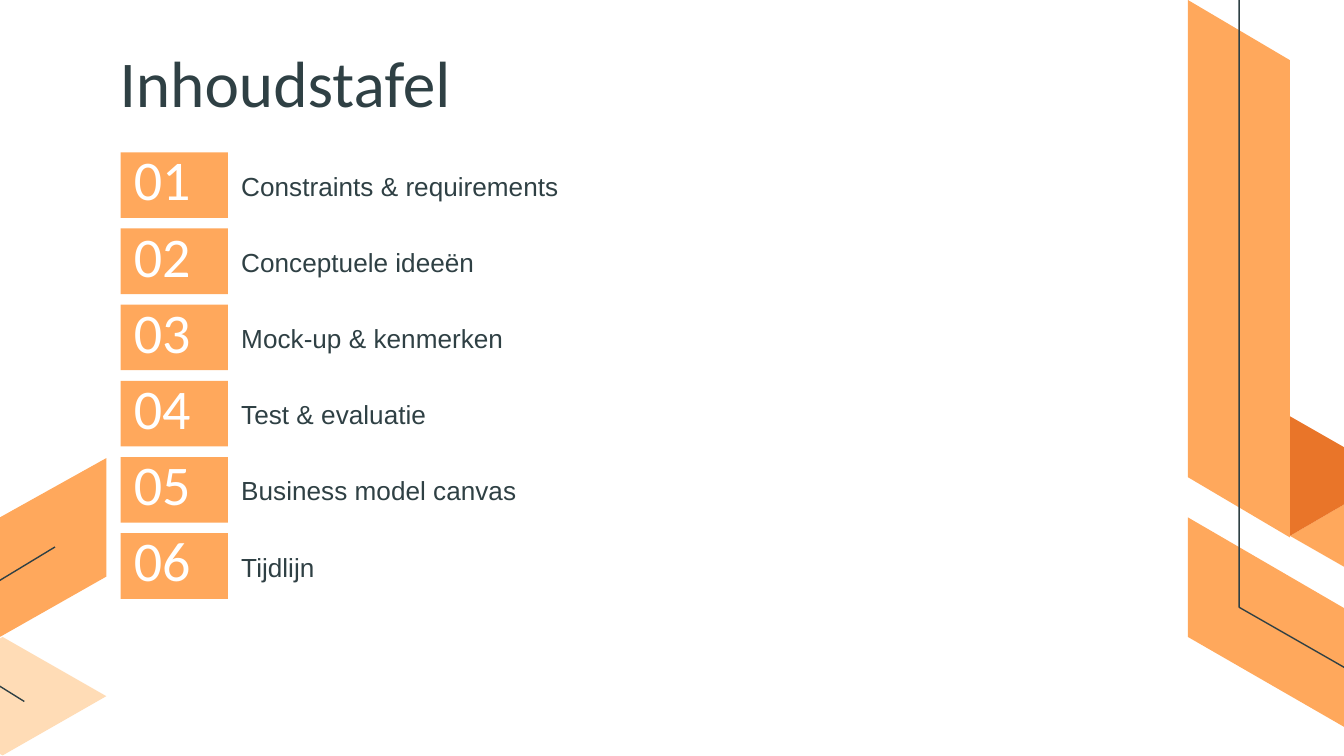
from pptx import Presentation
from pptx.dml.color import RGBColor
from pptx.enum.shapes import MSO_SHAPE
from pptx.enum.text import MSO_ANCHOR, PP_ALIGN
from pptx.util import Cm, Pt

RECT = MSO_SHAPE.RECTANGLE
TOP, MIDDLE = MSO_ANCHOR.TOP, MSO_ANCHOR.MIDDLE
LEFT = PP_ALIGN.LEFT

THEME = {
    "orange": RGBColor.from_string("FFA85C"),
    "peach": RGBColor.from_string("FFDCB6"),
    "rust": RGBColor.from_string("E97529"),
    "ink": RGBColor.from_string("2F4044"),
    "white": RGBColor.from_string("FFFFFF"),
    "heading_font": "Calibri",
    "body_font": "Arial",
    "title_size": Pt(35),
    "number_size": Pt(30),
    "label_size": Pt(14),
    "line_width": Pt(0.75),
}

TITLE = "Inhoudstafel"
CHAPTERS = [
    "Constraints & requirements",
    "Conceptuele ideeën",
    "Mock-up & kenmerken",
    "Test & evaluatie",
    "Business model canvas",
    "Tijdlijn",
]

# Ribbon faces, back to front: fill and corner points in cm
RIBBONS = [
    ("orange", [(0, 9.78), (2.01, 8.66), (2.01, 10.9), (0, 12.04)]),
    ("peach", [(0.05, 14.28), (-1.91, 13.16), (0.05, 12.04), (2.01, 13.16)]),
    ("orange", [(26.34, 11.25), (28.3, 10.13), (26.34, 8.99), (24.38, 10.13)]),
    ("rust", [(26.34, 8.99), (24.38, 10.13), (24.38, 7.87)]),
    ("orange", [(22.45, 0), (22.45, 9.02), (24.38, 10.16), (24.38, 1.14)]),
    ("orange", [(22.45, 9.78), (26.34, 12.04), (26.34, 14.28), (22.45, 12.04)]),
]
THREADS = [
    [(0.46, 13.26), (-0.76, 12.5), (-0.76, 11.43), (1.04, 10.34)],
    [(23.42, 0), (23.42, 11.48), (27.51, 13.82)],
]

ROW_TOP, ROW_PITCH = 2.88, 1.44
NUMBER_LEFT, NUMBER_WIDTH, NUMBER_HEIGHT = 2.28, 2.03, 1.24
LABEL_WIDTH, LABEL_HEIGHT = 8.59, 1.07
INSET = 0.25


def add_outline(s, points, closed):
    corners = [(Cm(x), Cm(y)) for x, y in points]
    builder = s.shapes.build_freeform(*corners[0])
    builder.add_line_segments(corners[1:], close=closed)
    sp = builder.convert_to_shape()
    sp.shadow.inherit = False
    return sp


def add_ribbon(s, color, points):
    sp = add_outline(s, points, True)
    sp.fill.solid()
    sp.fill.fore_color.rgb = THEME[color]
    sp.line.fill.background()


def add_thread(s, points):
    sp = add_outline(s, points, False)
    sp.fill.background()
    sp.line.color.rgb = THEME["ink"]
    sp.line.width = THEME["line_width"]


def write(sp, text, font, size, color, anchor=TOP, inset_top=0):
    tf = sp.text_frame
    tf.word_wrap = True
    tf.vertical_anchor = anchor
    tf.margin_left = tf.margin_right = tf.margin_bottom = Cm(INSET)
    tf.margin_top = Cm(inset_top)
    tf.text = text
    p = tf.paragraphs[0]
    p.alignment = LEFT
    r = p.runs[0]
    r.font.name = THEME[font]
    r.font.size = THEME[size]
    r.font.color.rgb = THEME[color]


def add_chapter(s, index, label):
    top = ROW_TOP + index * ROW_PITCH
    box = s.shapes.add_shape(RECT, Cm(NUMBER_LEFT), Cm(top),
                             Cm(NUMBER_WIDTH), Cm(NUMBER_HEIGHT))
    box.shadow.inherit = False
    box.fill.solid()
    box.fill.fore_color.rgb = THEME["orange"]
    box.line.fill.background()
    write(box, f"{index + 1:02d}", "heading_font", "number_size", "white", MIDDLE)

    label_top = top + (NUMBER_HEIGHT - LABEL_HEIGHT) / 2
    caption = s.shapes.add_textbox(Cm(NUMBER_LEFT + NUMBER_WIDTH), Cm(label_top),
                                   Cm(LABEL_WIDTH), Cm(LABEL_HEIGHT))
    write(caption, label, "body_font", "label_size", "ink", inset_top=INSET)


def main():
    prs = Presentation()
    prs.slide_width, prs.slide_height = Cm(25.4), Cm(14.29)
    s = prs.slides.add_slide(prs.slide_layouts[6])

    for color, points in RIBBONS:
        add_ribbon(s, color, points)
    for points in THREADS:
        add_thread(s, points)

    title = s.shapes.add_textbox(Cm(2.01), Cm(0.79), Cm(19.69), Cm(1.45))
    write(title, TITLE, "heading_font", "title_size", "ink")
    for index, label in enumerate(CHAPTERS):
        add_chapter(s, index, label)

    prs.save("out.pptx")


if __name__ == "__main__":
    main()
